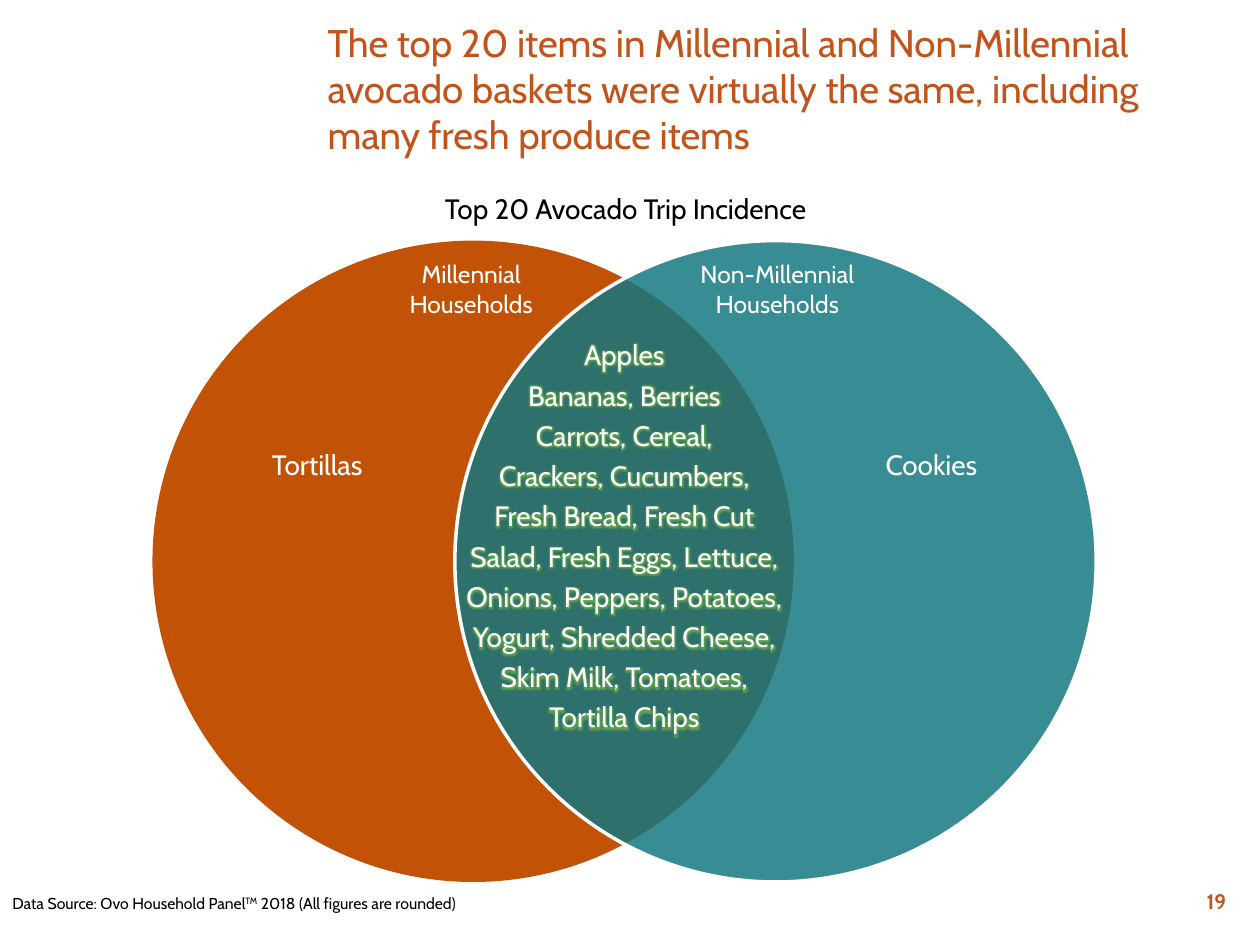
import pptx
import pptx.util
import pptx.dml.color
import pptx.enum.shapes
import pptx.enum.text
import pptx.oxml
import pptx.oxml.ns
from dataclasses import dataclass
from typing import Optional

Inches, Pt = pptx.util.Inches, pptx.util.Pt
RGB = pptx.dml.color.RGBColor.from_string
ALIGN = pptx.enum.text.PP_ALIGN
ANCHOR = pptx.enum.text.MSO_ANCHOR
qn = pptx.oxml.ns.qn
NS = pptx.oxml.ns.nsdecls("a")

COLORS = {"orange": "C25306", "teal": "12767F", "heading": "C2531A",
          "white": "FFFFFF", "black": "000000", "glow": "5B9F4F"}
FONT = "Cabin"


@dataclass
class Circle:
    left: float
    color: str
    opacity: int = 100
    outline: Optional[str] = None


@dataclass
class Label:
    box: tuple
    lines: list
    size: int
    color: str = "white"
    align: ALIGN = ALIGN.CENTER
    wrap: bool = True
    bold: bool = False
    spacing: Optional[int] = None
    glow: bool = False


def style_run(r, size: int, color: str, bold: bool = False) -> None:
    for name, value in {"name": FONT, "size": Pt(size), "bold": bold}.items():
        setattr(r.font, name, value)
    r.font.color.rgb = RGB(COLORS[color])


def add_glow(r) -> None:
    glow = pptx.oxml.parse_xml(
        f'<a:effectLst {NS}><a:glow rad="63500"><a:srgbClr val="{COLORS["glow"]}"/>'
        '</a:glow></a:effectLst>')
    r.font._element.find(qn("a:solidFill")).addnext(glow)


def add_circle(s, c: Circle) -> None:
    sp = s.shapes.add_shape(pptx.enum.shapes.MSO_SHAPE.OVAL, Inches(c.left),
                            Inches(1.91), Inches(5.09), Inches(5.09))
    sp.shadow.inherit = False
    sp.fill.solid()
    sp.fill.fore_color.rgb = RGB(COLORS[c.color])
    if c.opacity < 100:
        clr = sp.fill._xPr.find(qn("a:solidFill"))[0]
        clr.append(pptx.oxml.parse_xml(f'<a:alpha {NS} val="{c.opacity * 1000}"/>'))
    if c.outline:
        sp.line.color.rgb = RGB(COLORS[c.outline])
        sp.line.width = Pt(2)
    else:
        sp.line.fill.background()


def add_label(s, label: Label):
    tf = s.shapes.add_textbox(*map(Inches, label.box)).text_frame
    tf.word_wrap = label.wrap
    for i, line in enumerate(label.lines):
        p = tf.add_paragraph() if i else tf.paragraphs[0]
        p.alignment = label.align
        if label.spacing:
            p.line_spacing = Pt(label.spacing)
        r = p.add_run()
        r.text = line
        style_run(r, label.size, label.color, label.bold)
        if label.glow:
            add_glow(r)
    return tf


CIRCLES = [Circle(1.21, "orange"), Circle(3.61, "teal", 84, "white")]

SHARED_ITEMS = [
    "Apples",
    "Bananas, Berries",
    "Carrots, Cereal,",
    "Crackers, Cucumbers,",
    "Fresh Bread, Fresh Cut Salad, Fresh Eggs, Lettuce,",
    "Onions, Peppers, Potatoes, Yogurt, Shredded Cheese, Skim Milk, Tomatoes,",
    "Tortilla Chips",
]

LABELS = [
    Label((9.33, 7, 0.5, 0.25), ["19"], 12, "heading", ALIGN.RIGHT, bold=True),
    Label((2.92, 2.01, 1.64, 0.57), ["Millennial Households"], 14),
    Label((5.41, 2.01, 1.52, 0.57), ["Non-Millennial", "Households"], 14),
    Label((6.93, 3.5, 0.96, 0.64), ["Cookies"], 16, align=ALIGN.LEFT, wrap=False),
    Label((2.06, 3.5, 0.93, 0.64), ["Tortillas"], 16, align=ALIGN.LEFT, wrap=False),
    Label((3.58, 2.58, 2.75, 3.62), SHARED_ITEMS, 16, spacing=23, glow=True),
    Label((3.23, 1.47, 3.47, 0.37), ["Top 20 Avocado Trip Incidence"], 16, "black"),
]
SOURCE = Label((0, 7.04, 7.92, 0.25), ["Data Source: Ovo Household Panel"], 9,
               "black", ALIGN.LEFT)


def main() -> None:
    prs = pptx.Presentation()
    prs.slide_width, prs.slide_height = Inches(10), Inches(7.5)
    s = prs.slides.add_slide(prs.slide_layouts[5])

    # Title
    title = s.shapes.title
    title.left, title.top, title.width, title.height = map(Inches, (2.5, 0.25, 7, 0.9))
    tf = title.text_frame
    tf.text = ("The top 20 items in Millennial and Non-Millennial avocado baskets "
               "were virtually the same, including many fresh produce items")
    tf.word_wrap = True
    tf.auto_size = pptx.enum.text.MSO_AUTO_SIZE.NONE
    tf.vertical_anchor = ANCHOR.MIDDLE
    tf.paragraphs[0].alignment = ALIGN.LEFT
    style_run(tf.paragraphs[0].runs[0], 22, "heading")

    # Venn diagram and its labels
    for circle in CIRCLES:
        add_circle(s, circle)
    for label in LABELS:
        add_label(s, label)

    # Source line with a raised trademark
    p = add_label(s, SOURCE).paragraphs[0]
    for text, baseline in (("TM", 30), (" 2018 (All figures are rounded)", 0)):
        r = p.add_run()
        r.text = text
        style_run(r, SOURCE.size, SOURCE.color)
        r.font._element.set("baseline", str(baseline * 1000))

    prs.save("out.pptx")


if __name__ == "__main__":
    main()
